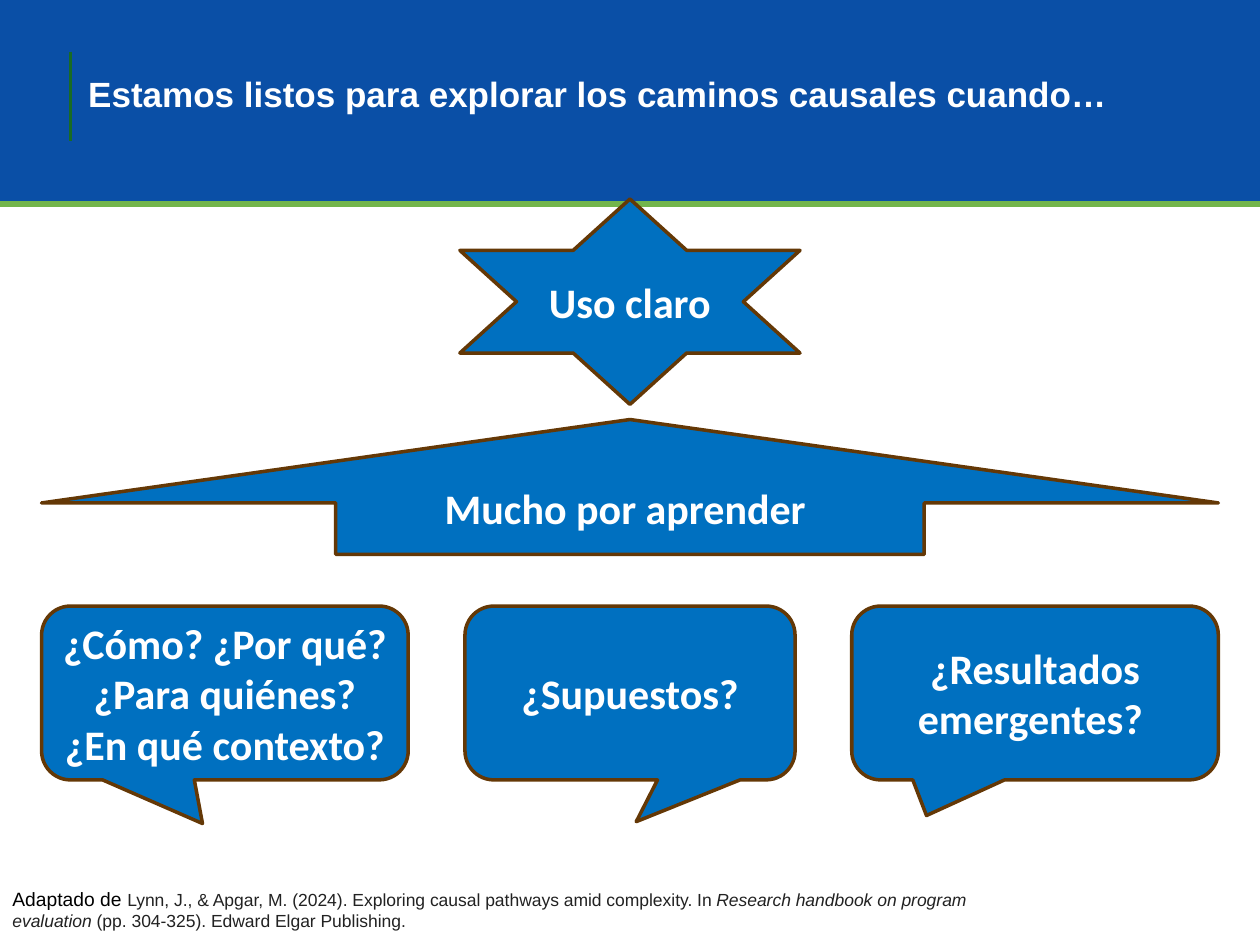
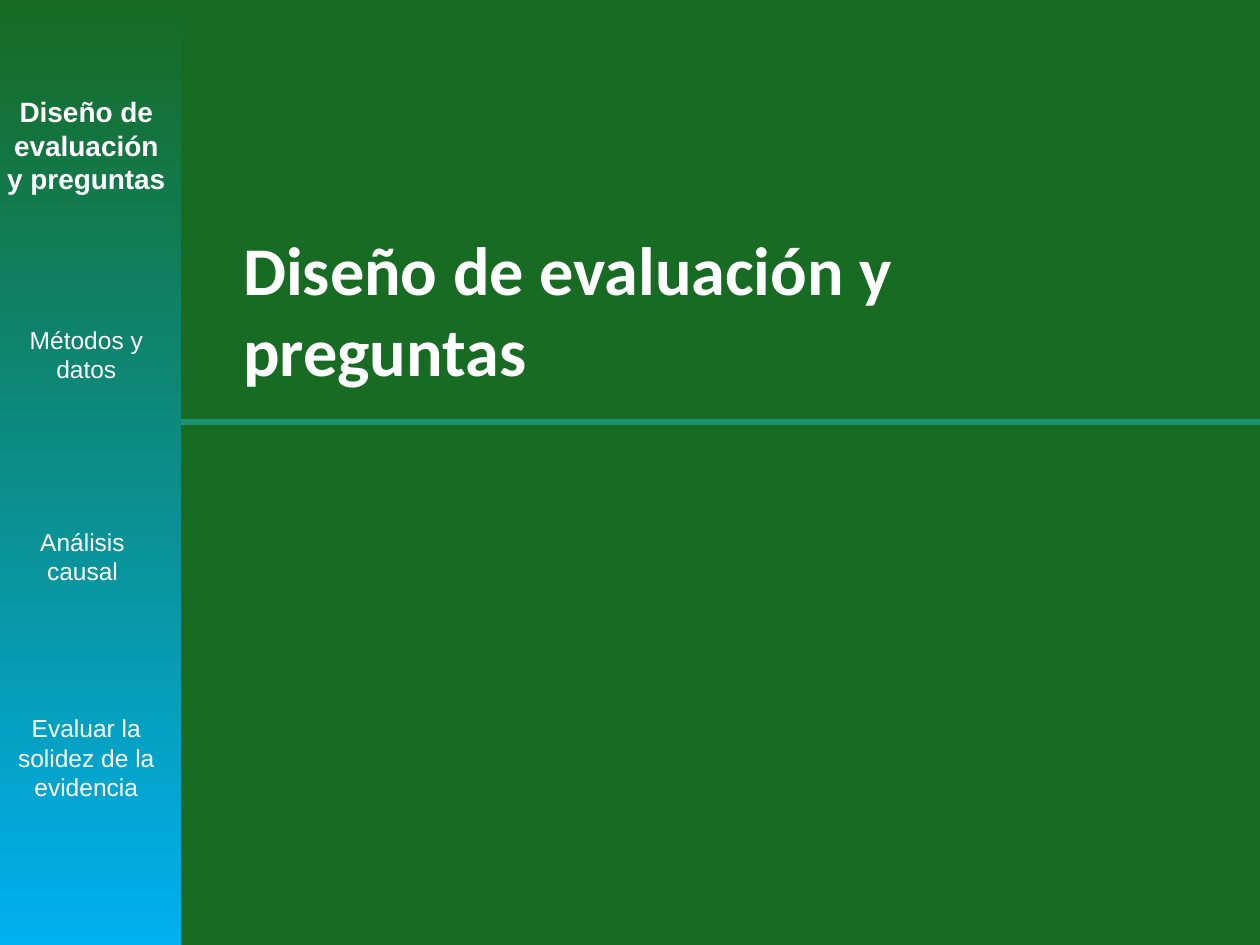
from dataclasses import dataclass

from lxml import etree
from pptx import Presentation
from pptx.dml.color import RGBColor
from pptx.enum.shapes import MSO_CONNECTOR, MSO_SHAPE
from pptx.enum.text import MSO_ANCHOR, MSO_AUTO_SIZE, PP_ALIGN
from pptx.oxml.ns import qn
from pptx.util import Emu, Pt

EMU_PER_PX = 9144
PAGE_WIDTH, PAGE_HEIGHT = 1000, 750
TITLE_ONLY = 5
RECTANGLE = MSO_SHAPE.RECTANGLE
PROCESS = MSO_SHAPE.FLOWCHART_PROCESS
CALLOUT = MSO_SHAPE.ROUNDED_RECTANGULAR_CALLOUT
UP_ARROW = MSO_SHAPE.UP_ARROW
STAR = MSO_SHAPE.STAR_6_POINT
STRAIGHT = MSO_CONNECTOR.STRAIGHT
TOP, MIDDLE = MSO_ANCHOR.TOP, MSO_ANCHOR.MIDDLE
LEFT, CENTER = PP_ALIGN.LEFT, PP_ALIGN.CENTER
NO_AUTOFIT = MSO_AUTO_SIZE.NONE


@dataclass(frozen=True)
class Theme:
    """Colours, fonts and type sizes shared by the slides."""
    white: str = "FFFFFF"
    black: str = "000000"
    citation: str = "222222"
    band: str = "0A4FA6"
    band_rule: str = "73B54B"
    title_bar: str = "196B24"
    shape_fill: str = "0070C0"
    shape_line: str = "643806"
    section: str = "176B22"
    section_rule: str = "1B9273"
    sidebar_end: str = "00B0F0"
    sans: str = "Arial"
    display: str = "Calibri"
    title_size: int = 20
    section_size: int = 39
    shape_size: int = 24
    active_size: int = 16
    step_size: int = 14
    source_size: int = 11
    citation_size: int = 10


THEME = Theme()


def px(*lengths):
    """Turn px lengths into EMU."""
    return [Emu(length * EMU_PER_PX) for length in lengths]


def set_font(font, name, size, color, bold=False):
    """Set the face, size, colour and weight of a font."""
    font.name, font.size, font.bold = name, Pt(size), bold
    font.color.rgb = RGBColor.from_string(color)


def set_frame(frame, anchor, side, top):
    """Set wrapping, anchor and insets of a text frame."""
    frame.word_wrap = True
    frame.auto_size = NO_AUTOFIT
    frame.vertical_anchor = anchor
    frame.margin_left, frame.margin_right = px(side, side)
    frame.margin_top, frame.margin_bottom = px(top, top)


def write(frame, lines, align, *font):
    """Write one paragraph for each line in one style."""
    for index, line in enumerate(lines):
        para = frame.add_paragraph() if index else frame.paragraphs[0]
        para.text = line
        para.alignment = align
        set_font(para.font, *font)


def add_block(shapes, kind, box, fill):
    """Add a flat shape without outline."""
    block = shapes.add_shape(kind, *px(*box))
    block.shadow.inherit = False
    block.fill.solid()
    block.fill.fore_color.rgb = RGBColor.from_string(fill)
    block.line.fill.background()
    return block


def add_rule(page, start, end, color, width):
    """Add a straight line without shadow."""
    rule = page.shapes.add_connector(STRAIGHT, *px(*start, *end))
    rule.line.color.rgb = RGBColor.from_string(color)
    rule.line.width = Pt(width)
    etree.SubElement(rule._element.spPr, qn("a:effectLst"))


def place_title(page, text, box, anchor, spacing, *font):
    """Move the title placeholder to the front and format it."""
    title = page.shapes.title
    title._element.getparent().append(title._element)
    title.left, title.top, title.width, title.height = px(*box)
    set_frame(title.text_frame, anchor, 5, 5)
    write(title.text_frame, [text], LEFT, *font)
    title.text_frame.paragraphs[0].line_spacing = spacing


def add_header(page, text, box):
    """Draw the title band with its rule, bar and title."""
    left, top, width, height = box
    add_block(page.shapes, RECTANGLE, box, THEME.band)
    rule_y = top + height - 1
    add_rule(page, (left, rule_y), (left + width, rule_y), THEME.band_rule, 3)
    place_title(page, text, (left + 65, top + 45, 848, 63), MIDDLE, 0.9,
                THEME.sans, THEME.title_size, THEME.white, True)
    add_rule(page, (left + 56, top + 41), (left + 56, top + 112),
             THEME.title_bar, 2)


def add_label_shape(page, kind, box, lines, adjustments=()):
    """Add an outlined blue shape with a centred label."""
    shape = add_block(page.shapes, kind, box, THEME.shape_fill)
    shape.line.color.rgb = RGBColor.from_string(THEME.shape_line)
    shape.line.width = Pt(2)
    for index, value in enumerate(adjustments):
        shape.adjustments[index] = value
    set_frame(shape.text_frame, MIDDLE, 10, 5)
    write(shape.text_frame, lines, CENTER, THEME.display, THEME.shape_size,
          THEME.white, True)


def add_pathway(page, box):
    """Draw three callouts under an arrow that points to a star."""
    left, top, width, height = box
    callouts = [
        (291, ["¿Cómo? ¿Por qué?", "¿Para quiénes?", "¿En qué contexto?"],
         (-0.061, 0.751)),
        (262, ["¿Supuestos?"], (0.019, 0.74)),
        (291, ["¿Resultados emergentes? "], (-0.296, 0.705)),
    ]
    gap = (width - sum(item[0] for item in callouts)) // (len(callouts) - 1)
    callout_height = 138
    x = left
    for callout_width, lines, tip in callouts:
        place = (x, top + height - callout_height, callout_width,
                 callout_height)
        add_label_shape(page, CALLOUT, place, lines, tip)
        x += callout_width + gap
    add_label_shape(page, UP_ARROW, (left, top + 175, width, 107),
                    ["Mucho por aprender "], (0.5, 0.619))
    star_width = 270
    add_label_shape(page, STAR, (left + (width - star_width) // 2, top,
                                 star_width, 163), ["Uso claro"])


def add_source(page, box):
    """Write the source citation."""
    frame = page.shapes.add_textbox(*px(*box)).text_frame
    set_frame(frame, TOP, 10, 10)
    para = frame.paragraphs[0]
    citation = (THEME.citation_size, THEME.citation)
    spans = [
        ("Adaptado de ", (THEME.source_size, THEME.black), False),
        ("Lynn, J., & Apgar, M. (2024). Exploring causal pathways amid "
         "complexity. In ", citation, False),
        ("Research handbook on program evaluation", citation, True),
        (" (pp. 304-325). Edward Elgar Publishing.", citation, False),
    ]
    for text, (size, color), italic in spans:
        span = para.add_run()
        span.text = text
        set_font(span.font, THEME.sans, size, color)
        span.font.italic = italic


def add_sidebar(page, box, steps, active):
    """Draw the gradient sidebar with its steps, the active one in bold."""
    left, top, width, height = box
    group = page.shapes.add_group_shape()
    panel = add_block(group.shapes, PROCESS, box, THEME.section)
    panel.fill.gradient()
    panel.fill.gradient_angle = 270
    for stop, color in zip(panel.fill.gradient_stops,
                           (THEME.section, THEME.sidebar_end)):
        stop.color.rgb = RGBColor.from_string(color)
    for index, (text, shift, offset) in enumerate(steps):
        place = (left + shift, top + offset, width, 93)
        frame = group.shapes.add_textbox(*px(*place)).text_frame
        set_frame(frame, TOP, 10, 10)
        is_active = index == active
        size = THEME.active_size if is_active else THEME.step_size
        write(frame, [text], CENTER, THEME.sans, size, THEME.white, is_active)


def build_causal_slide(deck):
    """Build the slide on readiness for causal pathways."""
    page = deck.slides.add_slide(deck.slide_layouts[TITLE_ONLY])
    add_header(page, "Estamos listos para explorar los caminos causales "
               "cuando…", (0, 0, PAGE_WIDTH, 163))
    add_pathway(page, (33, 158, 934, 461))
    add_source(page, (0, 694, 834, 56))


def build_section_slide(deck):
    """Build the section slide with its sidebar."""
    page = deck.slides.add_slide(deck.slide_layouts[TITLE_ONLY])
    add_block(page.shapes, RECTANGLE, (0, 0, PAGE_WIDTH, PAGE_HEIGHT),
              THEME.section)
    place_title(page, "Diseño de evaluación y preguntas",
                (188, 175, 737, 141), TOP, 1.0, THEME.display,
                THEME.section_size, THEME.white, True)
    add_rule(page, (0, 335), (PAGE_WIDTH, 335), THEME.section_rule, 3)
    steps = [
        ("Diseño de evaluación y preguntas", 0, 65),
        ("Métodos y datos", 0, 248),
        ("Análisis\vcausal", -3, 408),
        ("Evaluar la solidez de la evidencia", 0, 556),
    ]
    add_sidebar(page, (-7, 0, 151, PAGE_HEIGHT), steps, 0)


def main():
    """Build and save the deck."""
    deck = Presentation()
    deck.slide_width, deck.slide_height = px(PAGE_WIDTH, PAGE_HEIGHT)
    build_causal_slide(deck)
    build_section_slide(deck)
    deck.save("out.pptx")


if __name__ == "__main__":
    main()
